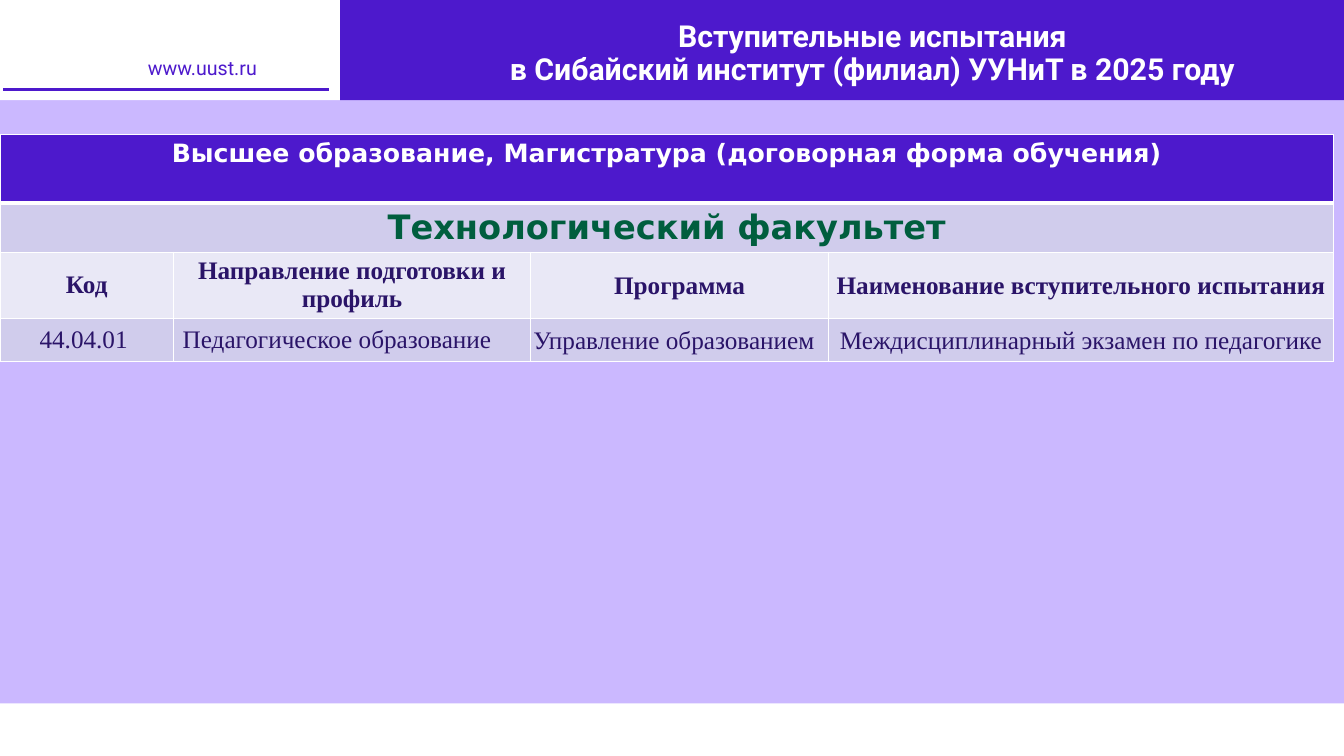
import pptx
import pptx.util
import pptx.oxml
import pptx.oxml.ns
import pptx.dml.color
import pptx.enum.shapes
import pptx.enum.text

Pt = pptx.util.Pt
RGB = pptx.dml.color.RGBColor
ALIGN = pptx.enum.text.PP_ALIGN
ANCHOR = pptx.enum.text.MSO_ANCHOR

WHITE = RGB(0xFF, 0xFF, 0xFF)
VIOLET = RGB(0x4D, 0x19, 0xCC)
LILAC = RGB(0xCB, 0xB8, 0xFF)
GREEN = RGB(0x00, 0x5E, 0x3E)
NAVY = RGB(0x2A, 0x14, 0x68)
DARK = RGB(0xD0, 0xCC, 0xEC)
PALE = RGB(0xE9, 0xE8, 0xF6)


def style(para, face, size, color, bold, align, space):
    para.alignment = align
    para.line_spacing = space
    for run in para.runs:
        run.font.name = face
        run.font.size = Pt(size)
        run.font.color.rgb = color
        run.font.bold = bold


def edge(cell, side, width):
    cell._tc.get_or_add_tcPr().append(pptx.oxml.parse_xml(
        f'<a:{side} {pptx.oxml.ns.nsdecls("a")} w="{Pt(width)}"><a:solidFill>'
        f'<a:srgbClr val="{WHITE}"/></a:solidFill></a:{side}>'))


deck = pptx.Presentation()
deck.slide_width = Pt(960)
deck.slide_height = Pt(540)
slide = deck.slides.add_slide(deck.slide_layouts[5])
slide.background.fill.solid()
slide.background.fill.fore_color.rgb = LILAC

# Header and footer bands
bands = [
    (0, -1.5, 243, 73, WHITE, 0),
    (243, 0, 717, 71.5, VIOLET, 0),
    (0, 60.5, 237.5, 7, VIOLET, 4.5),
    (0, 502.5, 960, 37.5, WHITE, 0),
]
for left, top, width, height, color, line in bands:
    band = slide.shapes.add_shape(
        pptx.enum.shapes.MSO_SHAPE.RECTANGLE,
        Pt(left), Pt(top), Pt(width), Pt(height))
    band.shadow.inherit = False
    band.fill.solid()
    band.fill.fore_color.rgb = color
    if line:
        band.line.color.rgb = WHITE
        band.line.width = Pt(line)
    else:
        band.line.fill.background()

# Site address
site = slide.shapes.add_textbox(Pt(98.5), Pt(38), Pt(112.5), Pt(19.5))
site.text_frame.word_wrap = True
site.text_frame.text = "www.uust.ru"
style(site.text_frame.paragraphs[0], "Roboto", 14, VIOLET, False, ALIGN.LEFT, 0.9)

# Title, placed in front of the bands
title = slide.shapes.title
title.left, title.top = Pt(325.5), Pt(12)
title.width, title.height = Pt(595.5), Pt(33)
frame = title.text_frame
frame.auto_size = pptx.enum.text.MSO_AUTO_SIZE.NONE
frame.vertical_anchor = ANCHOR.TOP
head = frame.paragraphs[0]
head.text = "Вступительные испытания\vв Сибайский институт (филиал) УУНиТ в 2025 году"
style(head, "Roboto", 21.6, WHITE, True, ALIGN.CENTER, 0.9)
site.element.addnext(title.element)

# Table of entrance exams
cols = [124, 255, 213, 360.5]
rows = [49, 35, 47, 31]
texts = [
    ["Высшее образование, Магистратура (договорная форма обучения)"],
    ["Технологический факультет"],
    ["Код", "Направление подготовки и профиль", "Программа",
     "Наименование вступительного испытания"],
    ["44.04.01 ", "Педагогическое образование", "Управление образованием",
     "Междисциплинарный экзамен по педагогике"],
]
looks = [
    (VIOLET, "DejaVu Sans", 18, WHITE, True),
    (DARK, "DejaVu Sans", 24, GREEN, True),
    (PALE, "Times New Roman", 18, NAVY, True),
    (DARK, "Times New Roman", 18, NAVY, False),
]
table = slide.shapes.add_table(
    len(rows), len(cols), Pt(0), Pt(96), Pt(sum(cols)), Pt(sum(rows))).table
for col, width in zip(table.columns, cols):
    col.width = Pt(width)
for row, height in zip(table.rows, rows):
    row.height = Pt(height)

for r, (fill, face, size, color, bold) in enumerate(looks):
    for c in range(len(cols)):
        cell = table.cell(r, c)
        for side in ("lnL", "lnR", "lnT", "lnB"):
            thick = (r, side) in ((0, "lnB"), (1, "lnT"))
            edge(cell, side, 3 if thick else 1)
        cell.fill.solid()
        cell.fill.fore_color.rgb = fill
        if c >= len(texts[r]):
            continue
        tight = c > 1
        cell.margin_left = cell.margin_right = Pt(2 if tight else 6.5)
        cell.margin_top = cell.margin_bottom = Pt(1.5 if tight else 3.6)
        cell.vertical_anchor = ANCHOR.MIDDLE if r > 1 else ANCHOR.TOP
        cell.text_frame.text = texts[r][c]
        align = ALIGN.LEFT if r == 3 and c in (1, 2) else ALIGN.CENTER
        style(cell.text_frame.paragraphs[0], face, size, color, bold, align,
              1.07 if tight else 1.0)

for r in (0, 1):
    table.cell(r, 0).merge(table.cell(r, len(cols) - 1))

deck.save("out.pptx")
